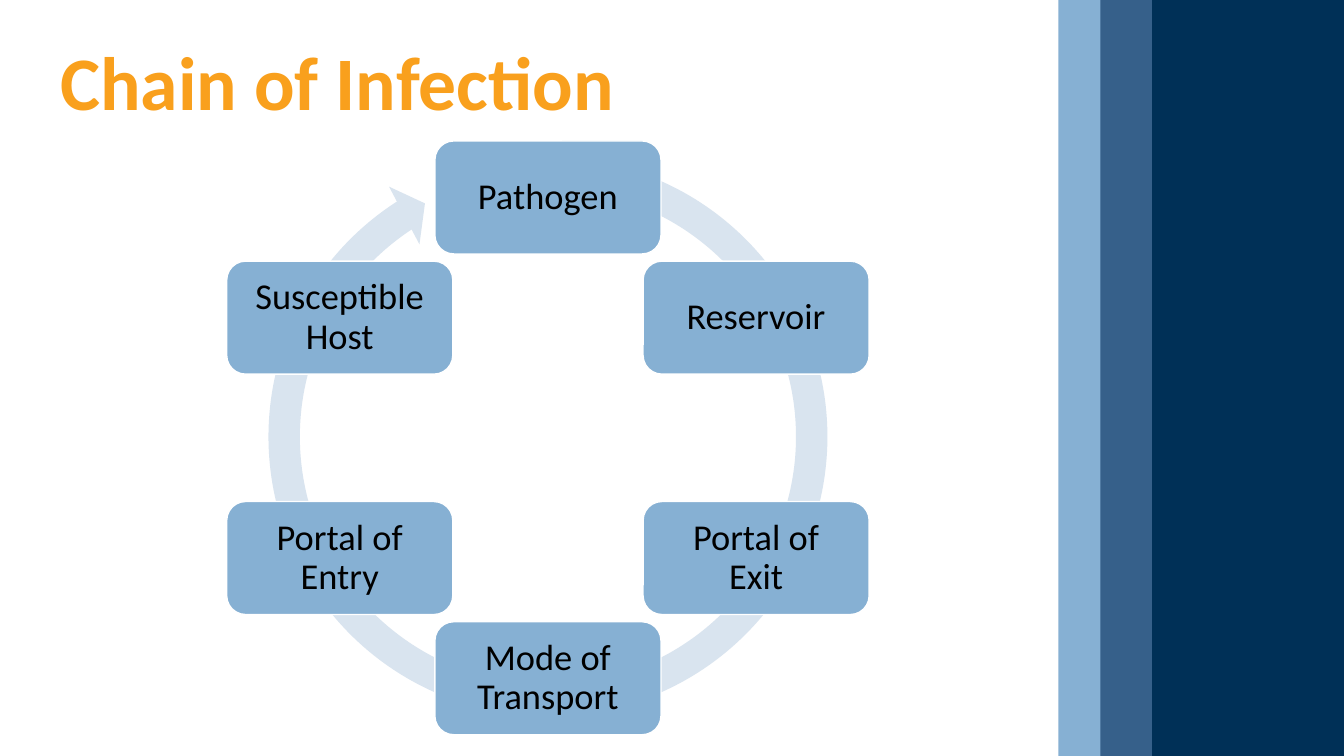
from dataclasses import dataclass
from math import cos, radians, sin

from pptx import Presentation
from pptx.dml.color import RGBColor
from pptx.enum.shapes import MSO_SHAPE
from pptx.enum.text import MSO_ANCHOR, PP_ALIGN
from pptx.util import Pt


@dataclass(frozen=True)
class Theme:
    """Hold the colours, font and type sizes of the deck."""
    font: str = "Calibri"
    title_color: str = "F9A01D"
    text_color: str = "000000"
    node_fill: str = "86B0D3"
    node_line: str = "FFFFFF"
    ring_fill: str = "D9E4EF"
    band_fills: tuple = ("86B0D3", "36608A", "003057")
    title_size: float = 54
    node_size: float = 26


@dataclass(frozen=True)
class Box:
    """Describe a region in points."""
    left: float
    top: float
    width: float
    height: float

    def lengths(self):
        """Return the four lengths for a shape call."""
        return Pt(self.left), Pt(self.top), Pt(self.width), Pt(self.height)


THEME = Theme()
PAGE = Box(0, 0, 960, 540)
STAGES = ("Pathogen", "Reservoir", "Portal of Exit",
          "Mode of Transport", "Portal of Entry", "Susceptible Host")


def add_filled(page, kind, box, fill):
    """Add a flat preset shape without a line."""
    shape = page.shapes.add_shape(kind, *box.lengths())
    shape.shadow.inherit = False
    shape.fill.solid()
    shape.fill.fore_color.rgb = RGBColor.from_string(fill)
    shape.line.fill.background()
    return shape


def write_line(frame, text, size, color, bold, align):
    """Write one paragraph, centred vertically, into a text frame."""
    frame.word_wrap = True
    frame.vertical_anchor = MSO_ANCHOR.MIDDLE
    para = frame.paragraphs[0]
    para.alignment = align
    para.line_spacing = 0.9
    span = para.add_run()
    span.text = text
    span.font.name = THEME.font
    span.font.size = Pt(size)
    span.font.bold = bold
    span.font.color.rgb = RGBColor.from_string(color)


def draw_bands(page, box):
    """Stack the side bands, each reaching the right edge of the box."""
    for offset, fill in zip((0, 30, 67), THEME.band_fills):
        band = Box(box.left + offset, box.top, box.width - offset, box.height)
        add_filled(page, MSO_SHAPE.RECTANGLE, band, fill)


def draw_title(page, box):
    """Place the slide title."""
    title = page.shapes.add_textbox(*box.lengths())
    write_line(title.text_frame, "Chain of Infection", THEME.title_size,
               THEME.title_color, True, PP_ALIGN.LEFT)


def draw_node(page, box, stage):
    """Draw one labelled stage of the cycle."""
    node = add_filled(page, MSO_SHAPE.ROUNDED_RECTANGLE, box, THEME.node_fill)
    node.line.color.rgb = RGBColor.from_string(THEME.node_line)
    node.line.width = Pt(1)
    frame = node.text_frame
    frame.margin_left = frame.margin_right = Pt(11.8)
    frame.margin_top = frame.margin_bottom = Pt(11.8)
    write_line(frame, stage, THEME.node_size, THEME.text_color, False,
               PP_ALIGN.CENTER)


def draw_cycle(page, box):
    """Draw the ring arrow and space the stages evenly around it."""
    node_width, node_height = 161.5, 80.7
    radius = (box.height - node_height) / 2
    center_x = box.left + box.width / 2
    center_y = box.top + box.height / 2
    side = 423.4
    ring_box = Box(center_x - side / 2, center_y - side / 2 - 0.8, side, side)
    ring = add_filled(page, MSO_SHAPE.CIRCULAR_ARROW, ring_box, THEME.ring_fill)
    for index, value in enumerate((0.053, 3.126, 142.2, 171.318, 0.055)):
        ring.adjustments[index] = value
    for index, stage in enumerate(STAGES):
        angle = radians(index * 360 / len(STAGES))
        node_box = Box(center_x + radius * sin(angle) - node_width / 2,
                       center_y - radius * cos(angle) - node_height / 2,
                       node_width, node_height)
        draw_node(page, node_box, stage)


def main():
    """Build and save the deck."""
    deck = Presentation()
    deck.slide_width, deck.slide_height = Pt(PAGE.width), Pt(PAGE.height)
    page = deck.slides.add_slide(deck.slide_layouts[6])
    draw_bands(page, Box(756, 0, 204, PAGE.height))
    draw_title(page, Box(36, 26.6, 703, 70))
    draw_cycle(page, Box(162, 100.7, 458.8, 424.1))
    deck.save("out.pptx")


if __name__ == "__main__":
    main()
